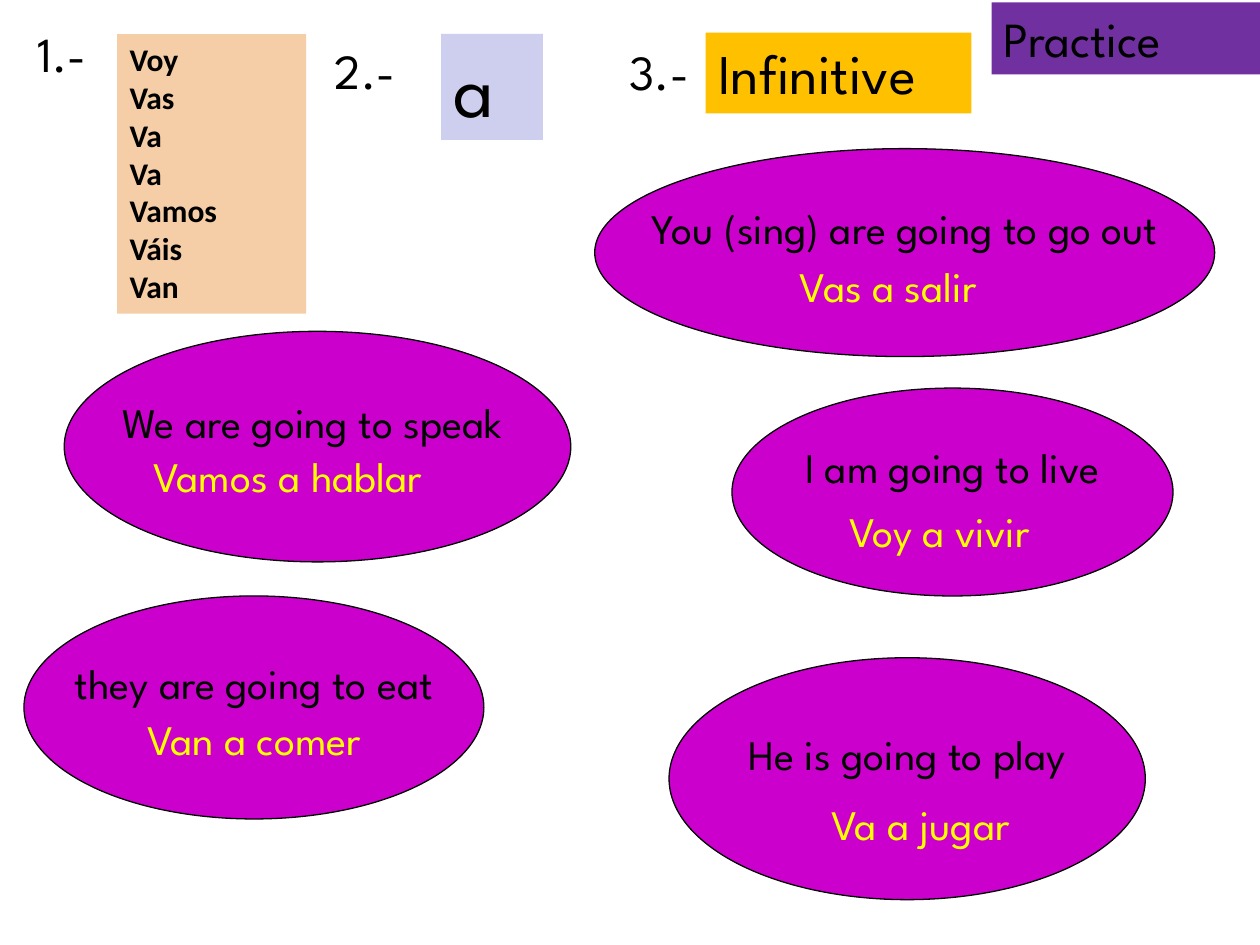
"""Build a Spanish practice slide on the near future: ir + a + infinitive."""
import pptx
import pptx.dml.color
import pptx.enum.shapes
import pptx.enum.text
import pptx.util

Inches = pptx.util.Inches
SHAPE = pptx.enum.shapes.MSO_SHAPE
ANCHOR = pptx.enum.text.MSO_ANCHOR
ALIGN = pptx.enum.text.PP_ALIGN
AUTO_SIZE = pptx.enum.text.MSO_AUTO_SIZE

COLORS = {
    "black": "000000", "magenta": "CC00CC", "yellow": "FFFF00",
    "peach": "F5CEA7", "lavender": "CECEEF", "amber": "FFC000", "purple": "7030A0",
}
HEADING_FONT, VERB_FONT = "League Spartan", "Calibri"

PROMPTS = [
    ("We are going to speak ", (0.51, 2.63, 4.02, 1.83)),
    ("You (sing) are going to go out", (4.72, 1.18, 4.92, 1.65)),
    ("He is going to play", (5.31, 5.22, 3.78, 1.92)),
    ("they are going to eat", (0.19, 4.73, 3.65, 1.77)),
    ("I am going to live", (5.81, 3.08, 3.5, 1.65)),
]
ANSWERS = [
    ("Vamos a hablar", (1.12, 3.53, 2.71, 0.5)),
    ("Vas a salir", (6.25, 2.02, 1.88, 0.5)),
    ("Voy a vivir", (6.64, 3.96, 1.86, 0.5)),
    ("Van a comer", (1.07, 5.61, 2.24, 0.5)),
    ("Va a jugar", (6.5, 6.29, 1.9, 0.5)),
]
VERB_FORMS = ["Voy", "Vas", "Va", "Va", "Vamos", "Váis", "Van"]
STEP_NUMBERS = [("1.-", 0.2, 0.14), ("2.-", 2.56, 0.27), ("3.-", 4.9, 0.28)]
LABELS = [
    ("a", (3.5, 0.27, 0.81, 0.84), "lavender", 44),
    ("Infinitive", (5.6, 0.26, 2.11, 0.64), "amber", 32),
    ("Practice", (7.87, 0.02, 2.13, 0.57), "purple", 28),
]


def rgb(color):
    return pptx.dml.color.RGBColor.from_string(COLORS[color])


def write(frame, lines, size, color="black", font=HEADING_FONT, bold=False, align=ALIGN.LEFT):
    for index, line in enumerate(lines):
        paragraph = frame.add_paragraph() if index else frame.paragraphs[0]
        paragraph.alignment = align
        run = paragraph.add_run()
        run.text = line
        run.font.name, run.font.size, run.font.bold = font, pptx.util.Pt(size), bold
        run.font.color.rgb = rgb(color)


def add_filled(slide, preset, box, fill):
    shape = slide.shapes.add_shape(preset, *map(Inches, box))
    shape.shadow.inherit = False
    shape.fill.solid()
    shape.fill.fore_color.rgb = rgb(fill)
    return shape


def add_prompt(slide, prompt, box):
    ellipse = add_filled(slide, SHAPE.OVAL, box, "magenta")
    ellipse.line.color.rgb = rgb("black")
    ellipse.line.width = pptx.util.Pt(0.75)
    frame = ellipse.text_frame
    frame.word_wrap = False
    frame.vertical_anchor = ANCHOR.MIDDLE
    frame.margin_bottom = Inches(0.45)
    write(frame, [prompt], 24, align=ALIGN.CENTER)


def add_panel(slide, lines, box, fill, size, **style):
    panel = add_filled(slide, SHAPE.RECTANGLE, box, fill)
    panel.line.fill.background()
    frame = panel.text_frame
    frame.word_wrap = True
    frame.vertical_anchor = ANCHOR.TOP
    frame.auto_size = AUTO_SIZE.SHAPE_TO_FIT_TEXT
    write(frame, lines, size, **style)


def add_text(slide, text, box, size, color="black"):
    frame = slide.shapes.add_textbox(*map(Inches, box)).text_frame
    frame.word_wrap = False
    frame.auto_size = AUTO_SIZE.SHAPE_TO_FIT_TEXT
    write(frame, [text], size, color)


def main():
    deck = pptx.Presentation()
    deck.slide_width, deck.slide_height = Inches(10), Inches(7.5)
    slide = deck.slides.add_slide(deck.slide_layouts[6])

    for prompt, box in PROMPTS:
        add_prompt(slide, prompt, box)
    for answer, box in ANSWERS:
        add_text(slide, answer, box, 24, "yellow")
    add_panel(slide, VERB_FORMS, (0.93, 0.27, 1.5, 2.22), "peach", 18, font=VERB_FONT, bold=True)
    for number, left, top in STEP_NUMBERS:
        add_text(slide, number, (left, top, 0.79, 0.57), 28)
    for label, box, fill, size in LABELS:
        add_panel(slide, [label], box, fill, size)

    deck.save("out.pptx")


if __name__ == "__main__":
    main()
